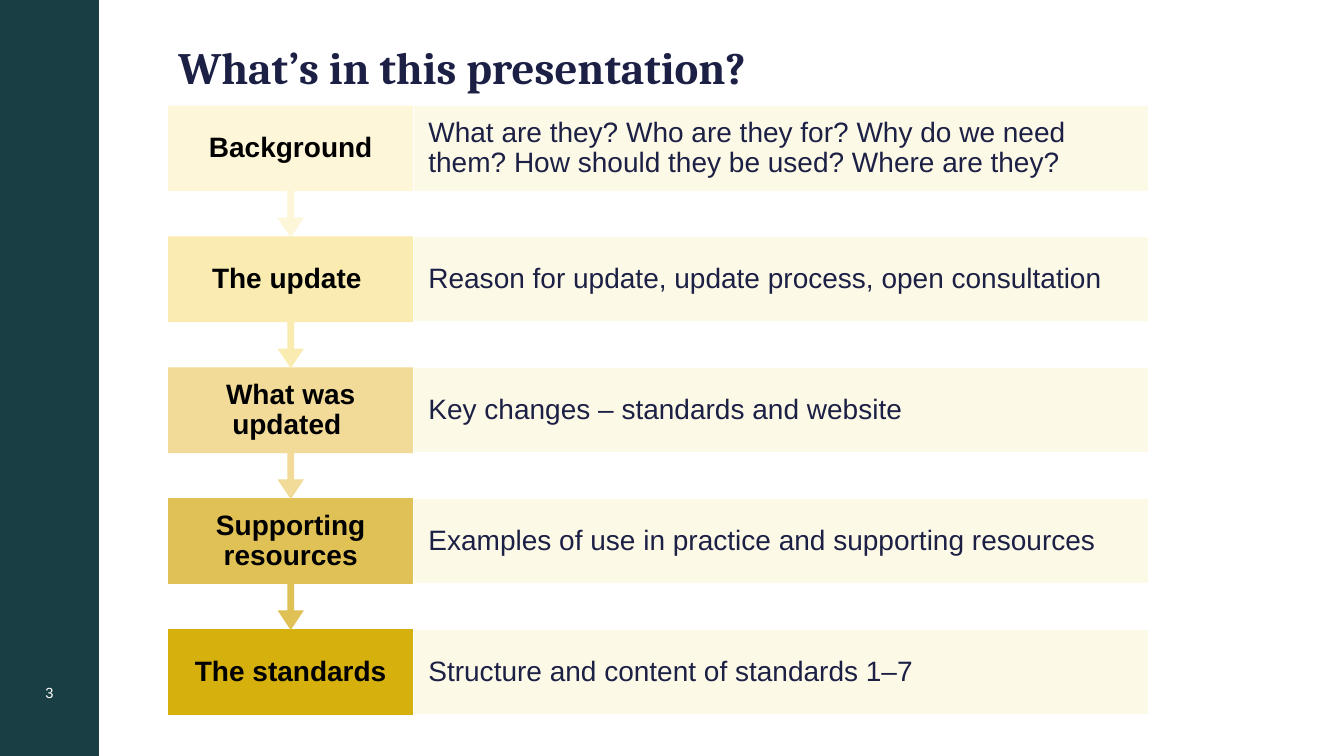
from lxml import etree
from pptx import Presentation
from pptx.dml.color import RGBColor
from pptx.enum.shapes import MSO_SHAPE
from pptx.enum.text import MSO_ANCHOR, PP_ALIGN
from pptx.oxml.ns import qn
from pptx.util import Pt

WHITE = RGBColor(0xFF, 0xFF, 0xFF)
BLACK = RGBColor(0x00, 0x00, 0x00)
NAVY = RGBColor(0x1C, 0x20, 0x45)
TEAL = RGBColor(0x19, 0x3E, 0x44)
CREAM = RGBColor(0xFD, 0xF6, 0xD8)
LEMON = RGBColor(0xFA, 0xEC, 0xB1)
SAND = RGBColor(0xF2, 0xDB, 0x98)
OCHRE = RGBColor(0xE0, 0xC1, 0x55)
GOLD = RGBColor(0xD6, 0xB0, 0x0D)

TITLE = "What’s in this presentation?"
PAGE_NUMBER = "3"
SECTIONS = [
    ("Background", CREAM,
     "What are they? Who are they for? Why do we need them? "
     "How should they be used? Where are they?"),
    ("The update ", LEMON, "Reason for update, update process, open consultation"),
    ("What was updated ", SAND, "Key changes – standards and website"),
    ("Supporting resources", OCHRE, "Examples of use in practice and supporting resources"),
    ("The standards", GOLD, "Structure and content of standards 1–7"),
]

SLIDE_W, SLIDE_H = 960, 540
SIDEBAR_W = 70.6
LEFT, TOP = 120.2, 75.4
STEP_W, DETAIL_W = 175, 525.6
ROW_H, ROW_PITCH = 61.2, 93.5
CALLOUT_H = 94.2
CALLOUT_ADJUSTMENTS = (0.05, 0.1, 0.15, 0.65)


def write(frame, words, size, color, align=PP_ALIGN.LEFT, bold=False,
          font="Arial", anchor=MSO_ANCHOR.MIDDLE, margins=(0, 0)):
    """Fill a text frame with one run; margins are horizontal and vertical."""
    frame.word_wrap = True
    frame.vertical_anchor = anchor
    frame.margin_left = frame.margin_right = Pt(margins[0])
    frame.margin_top = frame.margin_bottom = Pt(margins[1])
    paragraph = frame.paragraphs[0]
    paragraph.alignment = align
    paragraph.line_spacing = 0.9
    run = paragraph.add_run()
    run.text = words
    run.font.name = font
    run.font.size = Pt(size)
    run.font.bold = bold
    run.font.color.rgb = color


def add_block(slide, preset, left, top, width, height, fill):
    block = slide.shapes.add_shape(preset, Pt(left), Pt(top), Pt(width), Pt(height))
    block.shadow.inherit = False
    block.fill.solid()
    block.fill.fore_color.rgb = fill
    block.line.fill.background()
    return block


def set_opacity(block, percent):
    color = block.fill._xPr.find(qn("a:solidFill"))[0]
    etree.SubElement(color, qn("a:alpha"), val=str(percent * 1000))


def add_section(slide, index):
    name, color, summary = SECTIONS[index]
    top = TOP + index * ROW_PITCH
    if index == len(SECTIONS) - 1:
        step = add_block(slide, MSO_SHAPE.RECTANGLE, LEFT, top, STEP_W, ROW_H, color)
    else:
        step = add_block(slide, MSO_SHAPE.DOWN_ARROW_CALLOUT,
                         LEFT, top, STEP_W, CALLOUT_H, color)
        for position, value in enumerate(CALLOUT_ADJUSTMENTS):
            step.adjustments[position] = value
    write(step.text_frame, name, 20, BLACK, PP_ALIGN.CENTER, bold=True, margins=(12, 0))

    detail = add_block(slide, MSO_SHAPE.RECTANGLE,
                       LEFT + STEP_W, top, DETAIL_W, ROW_H, CREAM)
    set_opacity(detail, 60)
    detail.line.color.rgb = WHITE
    detail.line.width = Pt(1)
    write(detail.text_frame, summary, 20, NAVY, margins=(10.8, 0))


def main():
    prs = Presentation()
    prs.slide_width, prs.slide_height = Pt(SLIDE_W), Pt(SLIDE_H)
    slide = prs.slides.add_slide(prs.slide_layouts[5])

    add_block(slide, MSO_SHAPE.RECTANGLE, 0, 0, SIDEBAR_W, SLIDE_H, TEAL)
    page = slide.shapes.add_textbox(Pt(0), Pt(485.3), Pt(SIDEBAR_W), Pt(20.9))
    write(page.text_frame, PAGE_NUMBER, 10.5, WHITE, PP_ALIGN.CENTER)

    title = slide.shapes.title
    title.left, title.top = Pt(LEFT), Pt(28.8)
    title.width, title.height = Pt(STEP_W + DETAIL_W), Pt(31)
    write(title.text_frame, TITLE, 32, NAVY, bold=True, font="Cambria",
          anchor=MSO_ANCHOR.TOP, margins=(7.2, 3.6))

    # Last section first, so each arrow tip lies over the step below it
    for index in reversed(range(len(SECTIONS))):
        add_section(slide, index)

    prs.save("out.pptx")


if __name__ == "__main__":
    main()
